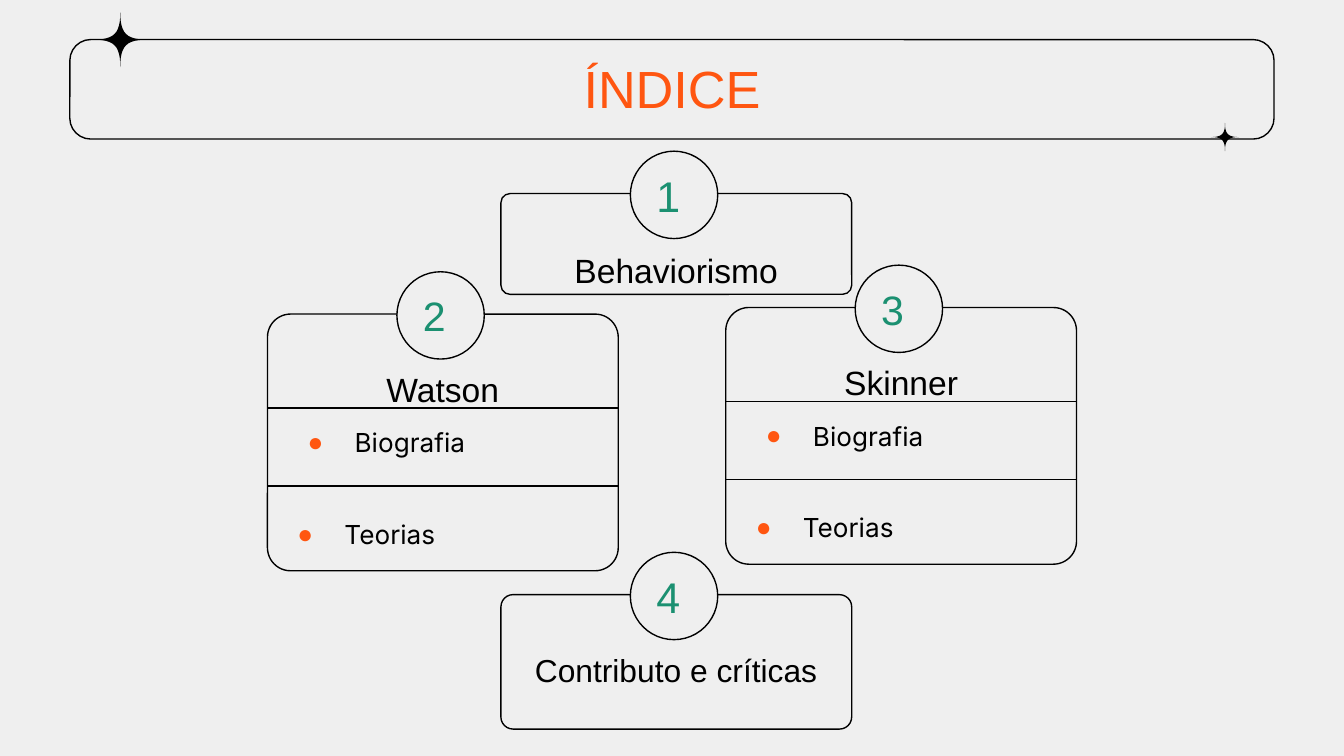
import lxml.etree
import pptx
import pptx.dml.color
import pptx.enum.shapes
import pptx.enum.text
import pptx.oxml.ns
import pptx.util

COLORS = {"paper": "EFEFEF", "ink": "000000", "orange": "FF5611", "green": "1B9071"}
RGB = {name: pptx.dml.color.RGBColor.from_string(value) for name, value in COLORS.items()}
SHAPE = pptx.enum.shapes.MSO_SHAPE
ALIGN = pptx.enum.text.PP_ALIGN
ANCHOR = pptx.enum.text.MSO_ANCHOR
AUTO_SIZE = pptx.enum.text.MSO_AUTO_SIZE

# Widescreen slide, 16 to 9
deck = pptx.Presentation()
deck.slide_width = pptx.util.Inches(10)
deck.slide_height = deck.slide_width * 9 // 16
page = deck.slides.add_slide(deck.slide_layouts[6])
page.background.fill.solid()
page.background.fill.fore_color.rgb = RGB["paper"]

# Square grid: 100 columns across the slide
CELL = deck.slide_width / 100


def write(box, text, size, font="Arial", color="ink", align=ALIGN.LEFT,
          anchor=ANCHOR.MIDDLE, after=0, bullet=False, grow=False):
    frame = box.text_frame
    frame.word_wrap = True
    frame.vertical_anchor = anchor
    frame.auto_size = AUTO_SIZE.SHAPE_TO_FIT_TEXT if grow else AUTO_SIZE.NONE
    frame.margin_left = frame.margin_right = round(CELL)
    frame.margin_top = frame.margin_bottom = round(CELL)
    para = frame.paragraphs[0]
    para.alignment = align
    para.space_after = pptx.util.Pt(after)
    if bullet:
        props = para._p.get_or_add_pPr()
        props.set("marL", str(round(5 * CELL)))
        props.set("indent", str(round(-3.5 * CELL)))
        tag = pptx.oxml.ns.qn
        tint = lxml.etree.SubElement(props, tag("a:buClr"))
        lxml.etree.SubElement(tint, tag("a:srgbClr")).set("val", COLORS["orange"])
        lxml.etree.SubElement(props, tag("a:buFont")).set("typeface", "Arial")
        lxml.etree.SubElement(props, tag("a:buChar")).set("char", "●")
    span = para.add_run()
    span.text = text
    span.font.size = pptx.util.Pt(size)
    span.font.name = font
    span.font.color.rgb = RGB[color]


def outline(kind, left, top, width, height, corner=None, fill=None):
    shape = page.shapes.add_shape(kind, *(round(n * CELL) for n in (left, top, width, height)))
    shape.shadow.inherit = False
    if corner is not None:
        shape.adjustments[0] = corner
    if fill:
        shape.fill.solid()
        shape.fill.fore_color.rgb = RGB[fill]
    else:
        shape.fill.background()
    shape.line.color.rgb = RGB["ink"]
    shape.line.width = pptx.util.Pt(0.75)
    return shape


# Title bar
outline(SHAPE.ROUNDED_RECTANGLE, 5.2, 2.95, 89.6, 7.4, corner=0.21)
title = page.shapes.add_textbox(*(round(n * CELL) for n in (7.8, 4, 84.4, 5)))
write(title, "ÍNDICE", 28, color="orange", align=ALIGN.CENTER)

# Four-pointed sparkles: one curved side, turned a quarter four times
STEPS = 12
PULL = 0.22
side = []
for step in range(STEPS):
    t = step / STEPS
    side.append((-3 * PULL * (1 - t) * t**2 - t**3,
                 -3 * PULL * t * (1 - t)**2 - (1 - t)**3))
star = []
for quarter in range(4):
    star += side
    side = [(y, -x) for x, y in side]
for center_x, center_y, radius in ((8.95, 2.95, 2.05), (91.15, 10.2, 1.05)):
    points = [(round((center_x + x * radius) * CELL), round((center_y + y * radius) * CELL))
              for x, y in star]
    builder = page.shapes.build_freeform(*points[0])
    builder.add_line_segments(points[1:], close=True)
    sparkle = builder.convert_to_shape()
    sparkle.shadow.inherit = False
    sparkle.fill.solid()
    sparkle.fill.fore_color.rgb = RGB["ink"]
    sparkle.line.fill.background()

# Numbered cards: number, number size, label, its size and height, left, top, height, drop, items
CARD = 26.1
BADGE = 6.5
cards = [
    ("3", 22, "Skinner", 18, 5, 54, 22.88, 19.1, 3.05, ("Biografia", "Teorias")),
    ("2", 22, "Watson", 18, 5, 19.9, 23.37, 19.1, 3.05, ("Biografia", "Teorias")),
    ("1", 23, "Behaviorismo", 18, 5, 37.27, 14.4, 7.5, 3.2, ()),
    ("4", 23, "Contributo e críticas", 17, 7.7, 37.27, 44.25, 10, 3.2, ()),
]
for number, number_size, label, label_size, label_height, left, top, height, drop, items in cards:
    card = outline(SHAPE.ROUNDED_RECTANGLE, left, top, CARD, height, corner=0.09)

    # Item rows with their dividing lines
    if items:
        write(card, items[0], 14, font="Inter", bullet=True)
        for row in (7, 12.8):
            rule = page.shapes.add_connector(
                pptx.enum.shapes.MSO_CONNECTOR.STRAIGHT,
                *(round(n * CELL) for n in (left, top + row, left + CARD, top + row)))
            rule.line.color.rgb = RGB["ink"]
            rule.line.width = pptx.util.Pt(0.75)
            lxml.etree.SubElement(rule._element.spPr, pptx.oxml.ns.qn("a:effectLst"))
        item = page.shapes.add_textbox(
            *(round(n * CELL) for n in (left - 0.25, top + 14.2, CARD + 0.5, 4.4)))
        write(item, items[1], 14, font="Inter", anchor=ANCHOR.TOP, bullet=True, grow=True)

    # Number badge and label
    badge = outline(SHAPE.OVAL, left + 9.63, top - 3.15, BADGE, BADGE, fill="paper")
    write(badge, number, number_size, color="green")
    caption = page.shapes.add_textbox(
        *(round(n * CELL) for n in (left - 0.25, top + drop, CARD + 0.5, label_height)))
    write(caption, label, label_size, align=ALIGN.CENTER, anchor=ANCHOR.TOP, after=12, grow=True)

deck.save("out.pptx")
